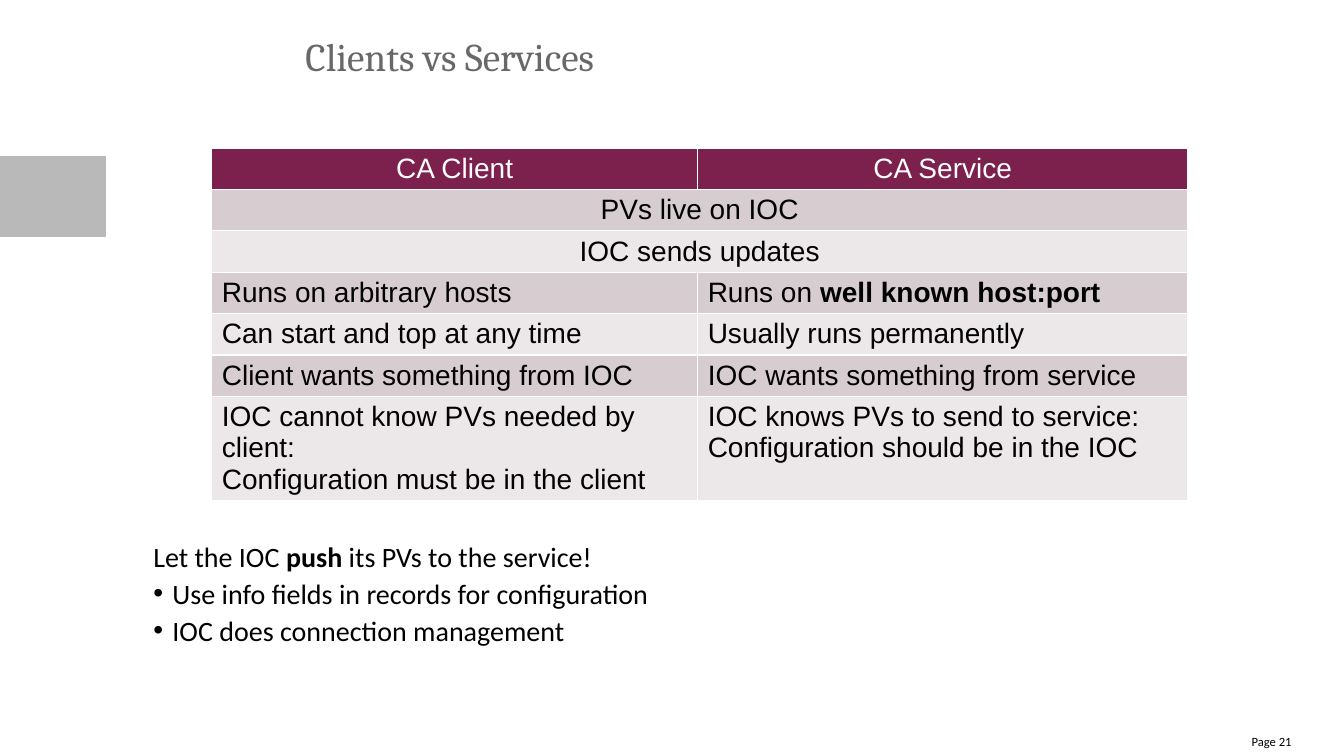
from dataclasses import dataclass
from lxml import etree
from pptx import Presentation
from pptx.dml.color import RGBColor
from pptx.enum import shapes, text
from pptx.oxml import ns
from pptx.util import Inches, Pt


@dataclass(frozen=True)
class Theme:
    white: str = "FFFFFF"
    black: str = "000000"
    title_grey: str = "686868"
    marker_grey: str = "B9B9B9"
    header: str = "7C204E"
    band_dark: str = "D7CDD0"
    band_light: str = "ECE8E9"
    title_size: int = 28
    body_size: int = 20
    page_size: int = 9


@dataclass(frozen=True)
class Style:
    font: str
    size: int
    color: str
    align: text.PP_ALIGN = text.PP_ALIGN.LEFT
    line_spacing: float = 1.0


@dataclass(frozen=True)
class Line:
    words: tuple[str, ...]
    bold_index: int = -1
    bullet: bool = False


@dataclass(frozen=True)
class TextArea:
    place: tuple[float, float, float, float]
    style: Style
    lines: tuple[Line, ...]


@dataclass(frozen=True)
class Row:
    cells: tuple[tuple[Line, ...], ...]
    height: float = 0.41


THEME = Theme()
CENTER = text.PP_ALIGN.CENTER
TITLE = Style("Cambria", THEME.title_size, THEME.title_grey)
BODY = Style("Calibri", THEME.body_size, THEME.black, line_spacing=1.1)
PAGE_NUMBER = Style("Calibri", THEME.page_size, THEME.black, text.PP_ALIGN.RIGHT)
HEADER_CELL = Style("Arial", THEME.body_size, THEME.white, CENTER)
SHARED_CELL = Style("Arial", THEME.body_size, THEME.black, CENTER)
CELL = Style("Arial", THEME.body_size, THEME.black)


def plain(*sentences: str) -> tuple[Line, ...]:
    return tuple(Line((sentence,)) for sentence in sentences)


COLUMN_WIDTHS = (4.82, 4.86)
ROWS = (
    Row((plain("CA Client"), plain("CA Service"))),
    Row((plain("PVs live on IOC"),)),
    Row((plain("IOC sends updates"),)),
    Row((plain("Runs on arbitrary hosts"),
         (Line(("Runs on ", "well known host:port"), bold_index=1),))),
    Row((plain("Can start and top at any time"), plain("Usually runs permanently"))),
    Row((plain("Client wants something from IOC"),
         plain("IOC wants something from service"))),
    Row((plain("IOC cannot know PVs needed by client:",
               "Configuration must be in the client"),
         plain("IOC knows PVs to send to service:",
               "Configuration should be in the IOC")), height=1.02),
)
AREAS = (
    TextArea((3.03, 0.32, 9.78, 0.56), TITLE, plain("Clients vs Services")),
    TextArea((11.97, 7.28, 0.84, 0.22), PAGE_NUMBER, plain("Page 21")),
    TextArea((1.52, 5.32, 9.75, 1.34), BODY, (
        Line(("Let the IOC ", "push", " its PVs to the service!"), bold_index=1),
        Line(("Use info fields in records for configuration",), bullet=True),
        Line(("IOC does connection management",), bullet=True),
    )),
)


def add_solid(parent, color: str) -> None:
    solid = etree.SubElement(parent, ns.qn("a:solidFill"))
    etree.SubElement(solid, ns.qn("a:srgbClr"), val=color)


def add_bullet(paragraph) -> None:
    properties = paragraph._p.get_or_add_pPr()
    properties.set("marL", str(Inches(0.19)))
    properties.set("indent", str(-Inches(0.19)))
    bullet_color = etree.SubElement(properties, ns.qn("a:buClr"))
    etree.SubElement(bullet_color, ns.qn("a:srgbClr"), val=THEME.black)
    etree.SubElement(properties, ns.qn("a:buFont"), typeface="Arial")
    etree.SubElement(properties, ns.qn("a:buChar"), char="•")


def write_lines(frame, lines: tuple[Line, ...], style: Style) -> None:
    for index, line in enumerate(lines):
        paragraph = frame.add_paragraph() if index else frame.paragraphs[0]
        if line.bullet:
            add_bullet(paragraph)
        paragraph.alignment = style.align
        paragraph.line_spacing = style.line_spacing
        for position, words in enumerate(line.words):
            span = paragraph.add_run()
            span.text = words
            span.font.name = style.font
            span.font.size = Pt(style.size)
            span.font.bold = position == line.bold_index
            span.font.color.rgb = RGBColor.from_string(style.color)


def add_text_area(page, area: TextArea) -> None:
    box = page.shapes.add_textbox(*map(Inches, area.place))
    frame = box.text_frame
    frame.word_wrap = True
    frame.margin_left = frame.margin_right = 0
    frame.margin_top = frame.margin_bottom = 0
    write_lines(frame, area.lines, area.style)


def format_cell(cell, fill: str) -> None:
    properties = cell._tc.get_or_add_tcPr()
    for side in ("lnL", "lnR", "lnT", "lnB"):
        border = etree.SubElement(properties, ns.qn(f"a:{side}"), w=str(Pt(1)))
        add_solid(border, THEME.white)
    cell.fill.solid()
    cell.fill.fore_color.rgb = RGBColor.from_string(fill)


def add_comparison(page) -> None:
    height = sum(row.height for row in ROWS)
    table = page.shapes.add_table(
        len(ROWS), len(COLUMN_WIDTHS), Inches(2.1), Inches(1.47),
        Inches(sum(COLUMN_WIDTHS)), Inches(height)).table
    for column, width in zip(table.columns, COLUMN_WIDTHS):
        column.width = Inches(width)
    for index, row in enumerate(ROWS):
        table.rows[index].height = Inches(row.height)
        shared = len(row.cells) == 1
        band = THEME.band_dark if index % 2 else THEME.band_light
        fill = band if index else THEME.header
        style = SHARED_CELL if shared else CELL
        for column in range(len(COLUMN_WIDTHS)):
            format_cell(table.cell(index, column), fill)
        if shared:
            table.cell(index, 0).merge(table.cell(index, 1))
        for column, lines in enumerate(row.cells):
            frame = table.cell(index, column).text_frame
            write_lines(frame, lines, style if index else HEADER_CELL)


def add_marker(page) -> None:
    marker = page.shapes.add_shape(
        shapes.MSO_SHAPE.RECTANGLE, 0, Inches(1.55), Inches(1.05), Inches(0.8))
    marker.shadow.inherit = False
    marker.fill.solid()
    marker.fill.fore_color.rgb = RGBColor.from_string(THEME.marker_grey)
    marker.line.fill.background()


def main() -> None:
    deck = Presentation()
    deck.slide_width, deck.slide_height = Inches(13.33), Inches(7.5)
    page = deck.slides.add_slide(deck.slide_layouts[6])
    add_marker(page)
    add_comparison(page)
    for area in AREAS:
        add_text_area(page, area)
    deck.save("out.pptx")


if __name__ == "__main__":
    main()
